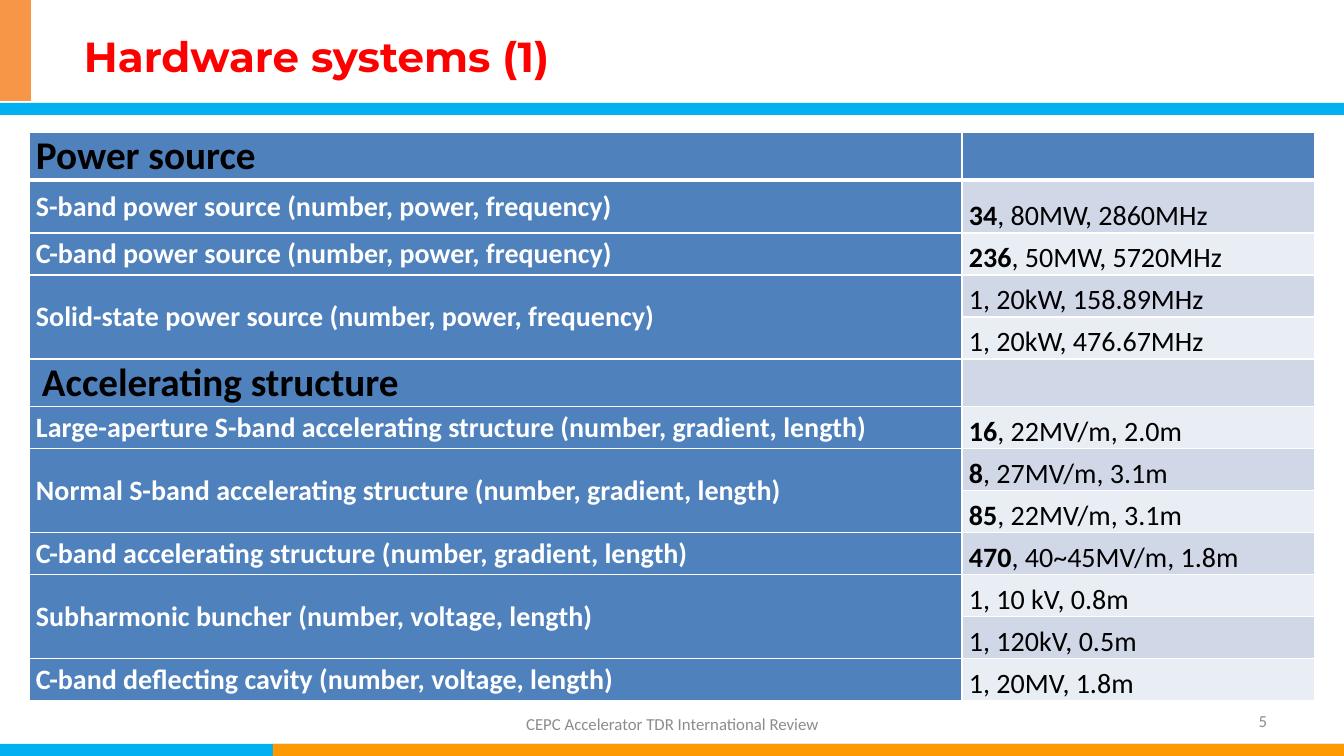
from lxml.etree import SubElement
from pptx import Presentation
from pptx.dml.color import RGBColor
from pptx.enum.shapes import MSO_SHAPE
from pptx.enum.text import MSO_ANCHOR, PP_ALIGN
from pptx.oxml.ns import qn
from pptx.util import Emu, Pt

EMU_PER_PX = 914400 / 100.8

SKY = RGBColor(0x00, 0xB0, 0xF0)
AMBER = RGBColor(0xFF, 0x99, 0x00)
ORANGE = RGBColor(0xF7, 0x96, 0x46)
RED = RGBColor(0xFF, 0x00, 0x00)
GREY = RGBColor(0x8C, 0x8C, 0x8C)
BLUE = RGBColor(0x4F, 0x81, 0xBD)
DARK_BAND = RGBColor(0xD0, 0xD8, 0xE8)
LIGHT_BAND = RGBColor(0xE9, 0xED, 0xF4)
BLACK = RGBColor(0x00, 0x00, 0x00)
WHITE = RGBColor(0xFF, 0xFF, 0xFF)

COLUMN_WIDTHS = (933, 353)
HEADING_HEIGHT = 48
FIRST_ENTRY_HEIGHT = 53
ENTRY_HEIGHT = 42
CELL_INSET = 7
HEADING_INDENT = 13

# Each section: heading, its left inset, and entries of (system, parameter sets)
SECTIONS = (
    ("Power source", CELL_INSET, (
        ("S-band power source (number, power, frequency)", ("34, 80MW, 2860MHz",)),
        ("C-band power source (number, power, frequency)", ("236, 50MW, 5720MHz",)),
        ("Solid-state power source (number, power, frequency)",
         ("1, 20kW, 158.89MHz", "1, 20kW, 476.67MHz")),
    )),
    ("Accelerating structure", HEADING_INDENT, (
        ("Large-aperture S-band accelerating structure (number, gradient, length)",
         ("16, 22MV/m, 2.0m",)),
        ("Normal S-band accelerating structure (number, gradient, length)",
         ("8, 27MV/m, 3.1m", "85, 22MV/m, 3.1m")),
        ("C-band accelerating structure (number, gradient, length)",
         ("470, 40~45MV/m, 1.8m",)),
        ("Subharmonic buncher (number, voltage, length)",
         ("1, 10 kV, 0.8m", "1, 120kV, 0.5m")),
        ("C-band deflecting cavity (number, voltage, length)", ("1, 20MV, 1.8m",)),
    )),
)


def px(length):
    return Emu(round(length * EMU_PER_PX))


def set_font(paragraph, size, color, bold=False, name="Calibri"):
    font = paragraph.font
    font.name, font.size, font.bold = name, Pt(size), bold
    font.color.rgb = color


def add_bar(slide, left, top, width, height, color):
    bar = slide.shapes.add_shape(
        MSO_SHAPE.RECTANGLE, px(left), px(top), px(width), px(height))
    bar.shadow.inherit = False
    bar.fill.solid()
    bar.fill.fore_color.rgb = color
    bar.line.fill.background()


def add_label(slide, box, text, align, **font):
    frame = slide.shapes.add_textbox(*map(px, box)).text_frame
    frame.word_wrap = True
    frame.vertical_anchor = MSO_ANCHOR.MIDDLE
    paragraph = frame.paragraphs[0]
    paragraph.text = text
    paragraph.alignment = align
    set_font(paragraph, **font)


def style_cell(cell, color, top=1, bottom=1):
    """Give a cell white borders (widths in points) and a fill."""
    properties = cell._tc.get_or_add_tcPr()
    for side, width in (("L", 1), ("R", 1), ("T", top), ("B", bottom)):
        border = SubElement(properties, qn(f"a:ln{side}"), w=str(Pt(width)))
        fill = SubElement(border, qn("a:solidFill"))
        SubElement(fill, qn("a:srgbClr"), val=str(WHITE))
    cell.fill.solid()
    cell.fill.fore_color.rgb = color


def write_cell(cell, parts, size, color, bold, anchor, inset=CELL_INSET):
    """Write text parts, the first one in bold when there are several."""
    cell.margin_left, cell.margin_right = px(inset), px(CELL_INSET)
    cell.margin_top = cell.margin_bottom = 0
    cell.vertical_anchor = anchor
    paragraph = cell.text_frame.paragraphs[0]
    set_font(paragraph, size, color, bold)
    for part in parts:
        paragraph.add_run().text = part
    if len(parts) > 1:
        paragraph.runs[0].font.bold = True


def split_number(parameters):
    """Part a quantity above one from the rest, so that it can be bold."""
    number, comma, rest = parameters.partition(",")
    return [parameters] if number == "1" else [number, comma + rest]


def add_systems_table(slide, left, top):
    heights = []
    for _, _, entries in SECTIONS:
        heights.append(HEADING_HEIGHT)
        heights += [ENTRY_HEIGHT for _, values in entries for _ in values]
    heights[1] = FIRST_ENTRY_HEIGHT
    table = slide.shapes.add_table(
        len(heights), len(COLUMN_WIDTHS), px(left), px(top),
        px(sum(COLUMN_WIDTHS)), px(sum(heights))).table
    table.first_row = table.horz_banding = False
    for column, width in zip(table.columns, COLUMN_WIDTHS):
        column.width = px(width)
    for index, height in enumerate(heights):
        table.rows[index].height = px(height)
        band = BLUE if index == 0 else DARK_BAND if index % 2 else LIGHT_BAND
        for column, color in enumerate((BLUE, band)):
            style_cell(table.cell(index, column), color,
                       top=3 if index == 1 else 1, bottom=3 if index == 0 else 1)

    row = 0
    for heading, indent, entries in SECTIONS:
        write_cell(table.cell(row, 0), [heading], 28, BLACK, True,
                   MSO_ANCHOR.BOTTOM, indent)
        row += 1
        for system, values in entries:
            system_cell = table.cell(row, 0)
            if len(values) > 1:
                system_cell.merge(table.cell(row + len(values) - 1, 0))
            write_cell(system_cell, [system], 20, WHITE, True, MSO_ANCHOR.MIDDLE)
            for parameters in values:
                write_cell(table.cell(row, 1), split_number(parameters), 20,
                           BLACK, False, MSO_ANCHOR.BOTTOM)
                row += 1


def main():
    presentation = Presentation()
    presentation.slide_width, presentation.slide_height = px(1344), px(756)
    slide = presentation.slides.add_slide(presentation.slide_layouts[6])

    add_bar(slide, 0, 744, 1344, 12, SKY)
    add_bar(slide, 273, 744, 1071, 12, AMBER)
    add_bar(slide, 0, 103, 1344, 12, SKY)
    add_bar(slide, 0, 0, 31, 101, ORANGE)

    add_label(slide, (74, 16, 1186, 80), "Hardware systems (1)", PP_ALIGN.LEFT,
              size=30, color=RED, bold=True, name="Montserrat")
    add_label(slide, (395, 704, 555, 39), "CEPC Accelerator TDR International Review",
              PP_ALIGN.CENTER, size=12, color=GREY)
    add_label(slide, (964, 701, 313, 40), "5", PP_ALIGN.RIGHT, size=12, color=GREY)
    add_systems_table(slide, 29, 132)

    presentation.save("out.pptx")


if __name__ == "__main__":
    main()
